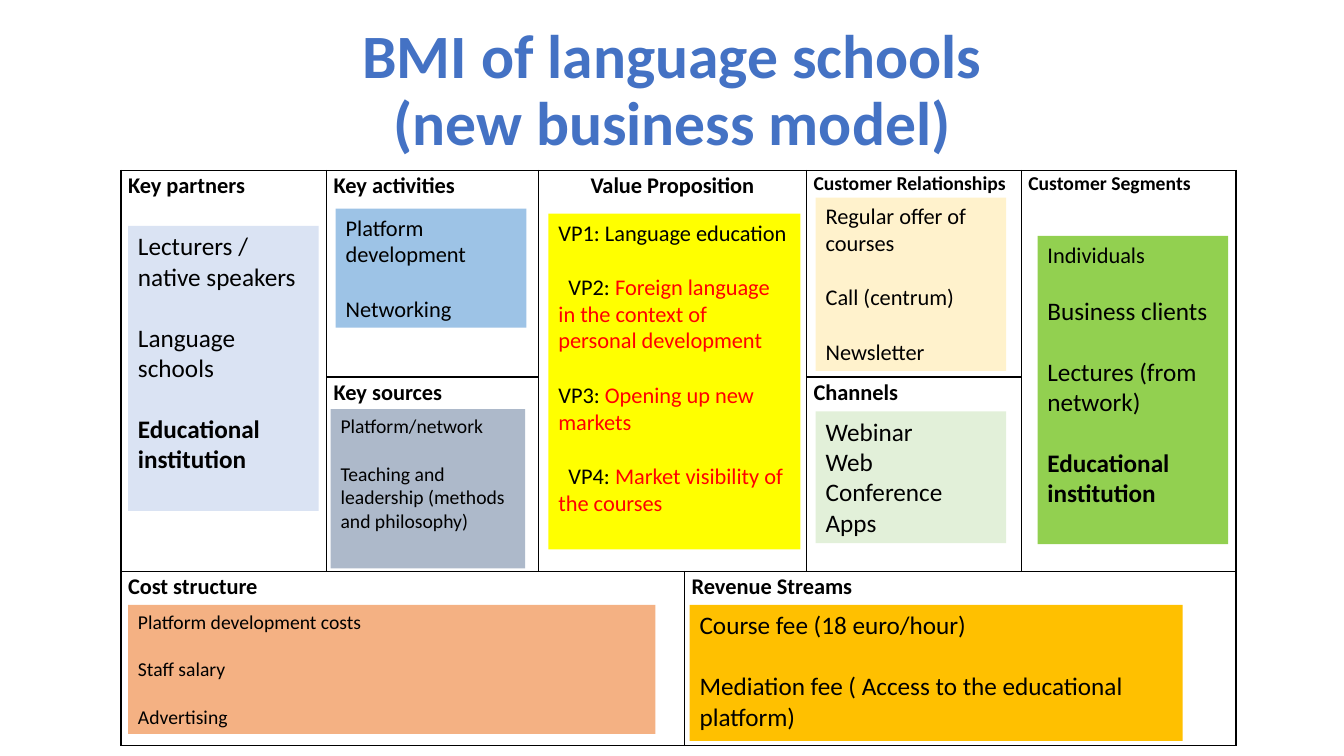
from dataclasses import dataclass

from lxml import etree
from pptx import Presentation
from pptx.dml.color import RGBColor
from pptx.enum.shapes import MSO_SHAPE
from pptx.enum.text import MSO_ANCHOR, MSO_AUTO_SIZE, PP_ALIGN
from pptx.oxml.ns import qn
from pptx.slide import Slide
from pptx.table import _Cell
from pptx.text.text import _Run
from pptx.util import Inches, Pt

RECTANGLE = MSO_SHAPE.RECTANGLE
TOP, MIDDLE = MSO_ANCHOR.TOP, MSO_ANCHOR.MIDDLE
LEFT, CENTER, JUSTIFY = PP_ALIGN.LEFT, PP_ALIGN.CENTER, PP_ALIGN.JUSTIFY
GROW = MSO_AUTO_SIZE.SHAPE_TO_FIT_TEXT


@dataclass(frozen=True)
class Theme:
    font: str = "Calibri"
    title: str = "4472C4"
    ink: str = "000000"
    accent: str = "FF0000"
    yellow: str = "FFFF00"
    green: str = "92D050"
    mint: str = "E2F0D9"
    cream: str = "FFF2CC"
    lavender: str = "DAE3F3"
    slate: str = "ADB9CA"
    sky: str = "9DC3E6"
    peach: str = "F4B183"
    gold: str = "FFC000"
    title_size: int = 44
    large: int = 18
    medium: int = 16
    small: int = 14
    line_height: float = 1.22


THEME = Theme()
LARGE, MEDIUM, SMALL = THEME.large, THEME.medium, THEME.small


@dataclass(frozen=True)
class Line:
    text: str
    size: int
    gap: int = 0
    accent: str = ""
    bold: bool = False
    indent: float = 0


@dataclass(frozen=True)
class Note:
    box: tuple[float, float, float, float]
    fill: str
    lines: list[Line]


@dataclass(frozen=True)
class Heading:
    text: str
    row: int
    col: int
    rows: int = 1
    cols: int = 1
    size: int = MEDIUM
    align: PP_ALIGN = JUSTIFY


COLUMNS = [2.04, 2.1, 1.45, 1.21, 2.13, 2.13]
ROWS = [2.05, 1.93, 1.73]

HEADINGS = [
    Heading("Key partners", 0, 0, rows=2),
    Heading("Key activities", 0, 1),
    Heading("Value Proposition", 0, 2, rows=2, cols=2, align=CENTER),
    Heading("Customer Relationships", 0, 4, size=SMALL),
    Heading("Customer Segments", 0, 5, rows=2, size=SMALL),
    Heading("Key sources", 1, 1),
    Heading("Channels", 1, 4),
    Heading("Cost structure", 2, 0, cols=3),
    Heading("Revenue Streams", 2, 3, cols=3),
]

NOTES = [
    Note((5.44, 2.12, 2.5, 3.33), THEME.yellow, [
        Line("VP1: Language education", MEDIUM),
        Line("VP2: ", MEDIUM, MEDIUM, "Foreign language in the context of personal development", indent=0.1),
        Line("VP3: ", MEDIUM, MEDIUM, "Opening up new"),
        Line("", MEDIUM, accent="markets"),
        Line("VP4: ", MEDIUM, MEDIUM, "Market visibility of the courses", indent=0.1),
    ]),
    Note((10.29, 2.34, 1.89, 3.06), THEME.green, [
        Line("Individuals", MEDIUM),
        Line("Business clients", LARGE, MEDIUM),
        Line("Lectures (from network)", LARGE, LARGE),
        Line("Educational institution", LARGE, LARGE, bold=True),
    ]),
    Note((8.09, 4.08, 1.89, 1.31), THEME.mint,
         [Line(text, LARGE) for text in ("Webinar", "Web", "Conference", "Apps")]),
    Note((8.09, 1.96, 1.89, 1.72), THEME.cream, [
        Line("Regular offer of courses", MEDIUM),
        Line("Call (centrum)", MEDIUM, MEDIUM),
        Line("Newsletter", MEDIUM, MEDIUM),
    ]),
    Note((1.27, 2.24, 1.89, 2.83), THEME.lavender, [
        Line("Lecturers / native speakers", LARGE),
        Line("Language schools", LARGE, LARGE),
        Line("Educational institution", LARGE, LARGE, bold=True),
    ]),
    Note((3.28, 4.06, 1.93, 1.58), THEME.slate, [
        Line("Platform/network", SMALL),
        Line("Teaching and leadership (methods and philosophy)", SMALL, SMALL),
    ]),
    Note((3.33, 2.07, 1.89, 1.18), THEME.sky, [
        Line("Platform development", MEDIUM),
        Line("Networking", MEDIUM, MEDIUM),
    ]),
    Note((1.27, 6, 5.23, 1.28), THEME.peach, [
        Line("Platform development costs", SMALL),
        Line("Staff salary", SMALL, SMALL),
        Line("Advertising", SMALL, SMALL),
    ]),
    Note((6.84, 6, 4.89, 1.35), THEME.gold, [
        Line("Course fee (18 euro/hour)", LARGE),
        Line("Mediation fee ( Access to the educational platform)", LARGE, LARGE),
    ]),
]


def style_run(r: _Run, size: int, color: str = THEME.ink, bold: bool = False) -> None:
    r.font.name = THEME.font
    r.font.size = Pt(size)
    r.font.bold = bold
    r.font.color.rgb = RGBColor.from_string(color)


def add_title(s: Slide) -> None:
    sp = s.shapes.add_textbox(Inches(0.92), Inches(0.19), Inches(11.5), Inches(1.45))
    tf = sp.text_frame
    tf.word_wrap = True
    tf.vertical_anchor = MIDDLE
    p = tf.paragraphs[0]
    p.text = "BMI of language schools\n(new business model)"
    p.alignment = CENTER
    p.line_spacing = 0.9
    for r in p.runs:
        style_run(r, THEME.title_size, THEME.title, True)


def add_borders(cell: _Cell) -> None:
    tc_pr = cell._tc.get_or_add_tcPr()
    for side in ("lnL", "lnR", "lnT", "lnB"):
        ln = etree.SubElement(tc_pr, qn(f"a:{side}"), w=str(Pt(1)))
        fill = etree.SubElement(ln, qn("a:solidFill"))
        etree.SubElement(fill, qn("a:srgbClr"), val=THEME.ink)


def add_canvas(s: Slide) -> None:
    table = s.shapes.add_table(len(ROWS), len(COLUMNS), Inches(1.2), Inches(1.69),
                               Inches(sum(COLUMNS)), Inches(sum(ROWS))).table
    table.first_row = table.horz_banding = False
    for column, width in zip(table.columns, COLUMNS):
        column.width = Inches(width)
    for row, height in zip(table.rows, ROWS):
        row.height = Inches(height)
    for cell in table.iter_cells():
        add_borders(cell)
        cell.fill.background()
        cell.margin_left = cell.margin_right = Inches(0.07)
        cell.margin_top = cell.margin_bottom = 0
    for heading in HEADINGS:
        cell = table.cell(heading.row, heading.col)
        if heading.rows * heading.cols > 1:
            cell.merge(table.cell(heading.row + heading.rows - 1, heading.col + heading.cols - 1))
        p = cell.text_frame.paragraphs[0]
        p.text = heading.text
        p.alignment = heading.align
        p.line_spacing = 1.07
        p.space_after = Pt(8)
        style_run(p.runs[0], heading.size, bold=True)


def add_note(s: Slide, note: Note) -> None:
    sp = s.shapes.add_shape(RECTANGLE, *map(Inches, note.box))
    sp.shadow.inherit = False
    sp.fill.solid()
    sp.fill.fore_color.rgb = RGBColor.from_string(note.fill)
    sp.line.fill.background()
    tf = sp.text_frame
    tf.word_wrap = True
    tf.auto_size = GROW
    tf.vertical_anchor = TOP
    for i, line in enumerate(note.lines):
        p = tf.add_paragraph() if i else tf.paragraphs[0]
        p.alignment = LEFT
        p.space_before = Pt(round(line.gap * THEME.line_height, 2))
        if line.indent:
            p._p.get_or_add_pPr().set("indent", str(Inches(line.indent)))
        for text, color in ((line.text, THEME.ink), (line.accent, THEME.accent)):
            if text:
                r = p.add_run()
                r.text = text
                style_run(r, line.size, color, line.bold)


def main() -> None:
    prs = Presentation()
    prs.slide_width, prs.slide_height = Inches(13.33), Inches(7.5)
    s = prs.slides.add_slide(prs.slide_layouts[6])
    add_title(s)
    add_canvas(s)
    for note in NOTES:
        add_note(s, note)
    prs.save("out.pptx")


if __name__ == "__main__":
    main()
